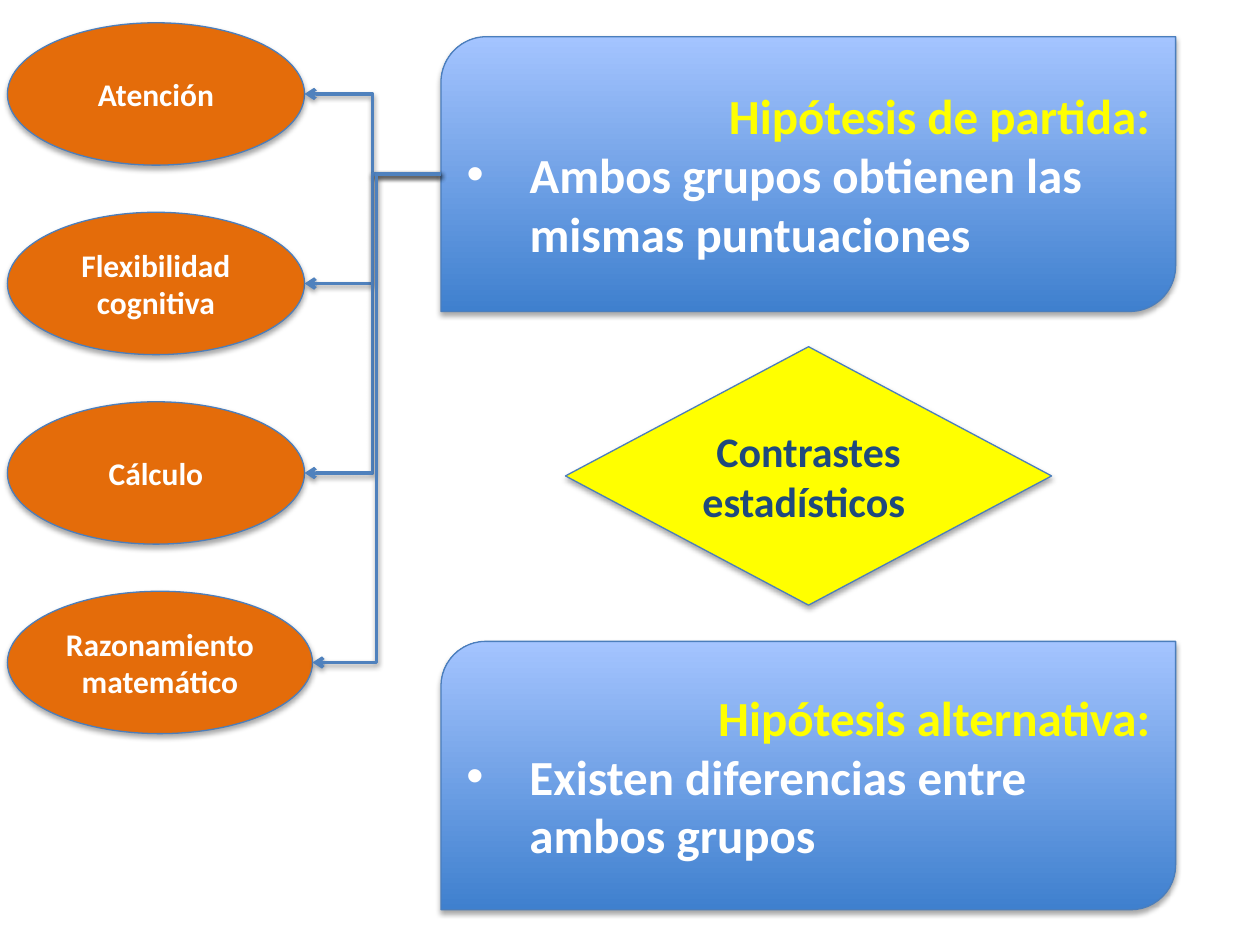
import pptx
import pptx.util
import pptx.dml.color
import pptx.enum.dml
import pptx.enum.shapes
import pptx.enum.text
import pptx.oxml
import pptx.oxml.ns

Cm, Pt = pptx.util.Cm, pptx.util.Pt
SHAPE = pptx.enum.shapes.MSO_SHAPE
ALIGN = pptx.enum.text.PP_ALIGN
NS = pptx.oxml.ns.nsdecls("a")

# Content
ABILITIES = ["Atención", "Flexibilidad cognitiva", "Cálculo", "Razonamiento matemático"]
CONTRAST = "Contrastes estadísticos "
HYPOTHESES = [  # title, statement, top, height (cm)
    ("Hipótesis de partida:", "Ambos grupos obtienen las mismas puntuaciones", 0.74, 5.54),
    ("Hipótesis alternativa:", "Existen diferencias entre ambos grupos", 12.93, 5.41),
]

THEME = {
    "font": "Calibri",
    "white": "FFFFFF", "yellow": "FFFF00", "navy": "1F497D", "orange": "E46C0A",
    "gradient": ("3F80CE", "A4C4FF"), "outline": "4B7EBC", "connector": "4F81BD",
    "hypothesis_size": 28, "contrast_size": 24, "ability_size": 18,
}

# Layout (cm)
BOX_LEFT, BOX_WIDTH = 8.89, 14.81
DIAMOND = (11.4, 6.99, 9.8, 5.21)
OVAL_LEFT, OVAL_TOP, OVAL_HEIGHT, OVAL_PITCH = 0.15, 0.46, 2.87, 3.82
OVAL_WIDTHS = [5.99, 5.99, 5.99, 6.15]


def rgb(name):
    return pptx.dml.color.RGBColor.from_string(THEME.get(name, name))


def add_shadow(s, distance, opacity):
    """Append a soft downward shadow; the line must already be set."""
    s._element.spPr.append(pptx.oxml.parse_xml(
        f'<a:effectLst {NS}><a:outerShdw blurRad="{Pt(3.1)}" dist="{Pt(distance)}" '
        f'dir="5400000" rotWithShape="0"><a:srgbClr val="000000">'
        f'<a:alpha val="{opacity * 1000}"/></a:srgbClr></a:outerShdw></a:effectLst>'))


def add_block(slide, kind, box, fill):
    s = slide.shapes.add_shape(kind, *map(Cm, box))
    if isinstance(THEME[fill], tuple):
        s.fill.gradient()
        s.fill.gradient_angle = 90
        for stop, color in zip(s.fill.gradient_stops, THEME[fill]):
            stop.color.rgb = rgb(color)
    else:
        s.fill.solid()
        s.fill.fore_color.rgb = rgb(fill)
    s.line.color.rgb = rgb("outline")
    s.line.width = Pt(0.75)
    add_shadow(s, 1.8, 35)
    s.text_frame.word_wrap = True
    s.text_frame.vertical_anchor = pptx.enum.text.MSO_ANCHOR.MIDDLE
    return s


def write(p, text, size, color, align=ALIGN.CENTER):
    p.text = text
    p.alignment = align
    font = p.runs[0].font
    font.name, font.size, font.bold = THEME["font"], Pt(THEME[size]), True
    font.color.rgb = rgb(color)


def add_bullet(p):
    pPr = p._p.get_or_add_pPr()
    pPr.set("marL", str(Cm(1.27)))
    pPr.set("indent", str(-Cm(1.27)))
    pPr.append(pptx.oxml.parse_xml(f'<a:buFont {NS} typeface="Arial"/>'))
    pPr.append(pptx.oxml.parse_xml(f'<a:buChar {NS} char="•"/>'))


def add_arrow(slide, start, end):
    c = slide.shapes.add_connector(pptx.enum.shapes.MSO_CONNECTOR.ELBOW,
                                   *map(Cm, start + end))
    c.line.color.rgb = rgb("connector")
    c.line.width = Pt(2)
    c.line._get_or_add_ln().append(pptx.oxml.parse_xml(f'<a:tailEnd {NS} type="arrow"/>'))
    add_shadow(c, 1.6, 38)


def main():
    prs = pptx.Presentation()
    prs.slide_width, prs.slide_height = Cm(25.4), Cm(19.05)
    slide = prs.slides.add_slide(prs.slide_layouts[6])

    for title, statement, top, height in HYPOTHESES:
        s = add_block(slide, SHAPE.ROUND_2_DIAG_RECTANGLE,
                      (BOX_LEFT, top, BOX_WIDTH, height), "gradient")
        tf = s.text_frame
        write(tf.paragraphs[0], title, "hypothesis_size", "yellow", ALIGN.RIGHT)
        p = tf.add_paragraph()
        add_bullet(p)
        write(p, statement, "hypothesis_size", "white", ALIGN.LEFT)

    s = add_block(slide, SHAPE.DIAMOND, DIAMOND, "yellow")
    write(s.text_frame.paragraphs[0], CONTRAST, "contrast_size", "navy")

    _, _, first_top, first_height = HYPOTHESES[0]
    start = (BOX_LEFT, first_top + first_height / 2)
    for i, (ability, width) in enumerate(zip(ABILITIES, OVAL_WIDTHS)):
        top = OVAL_TOP + i * OVAL_PITCH
        s = add_block(slide, SHAPE.OVAL, (OVAL_LEFT, top, width, OVAL_HEIGHT), "orange")
        write(s.text_frame.paragraphs[0], ability, "ability_size", "white")
        add_arrow(slide, start, (OVAL_LEFT + width, top + OVAL_HEIGHT / 2))

    prs.save("out.pptx")


if __name__ == "__main__":
    main()
